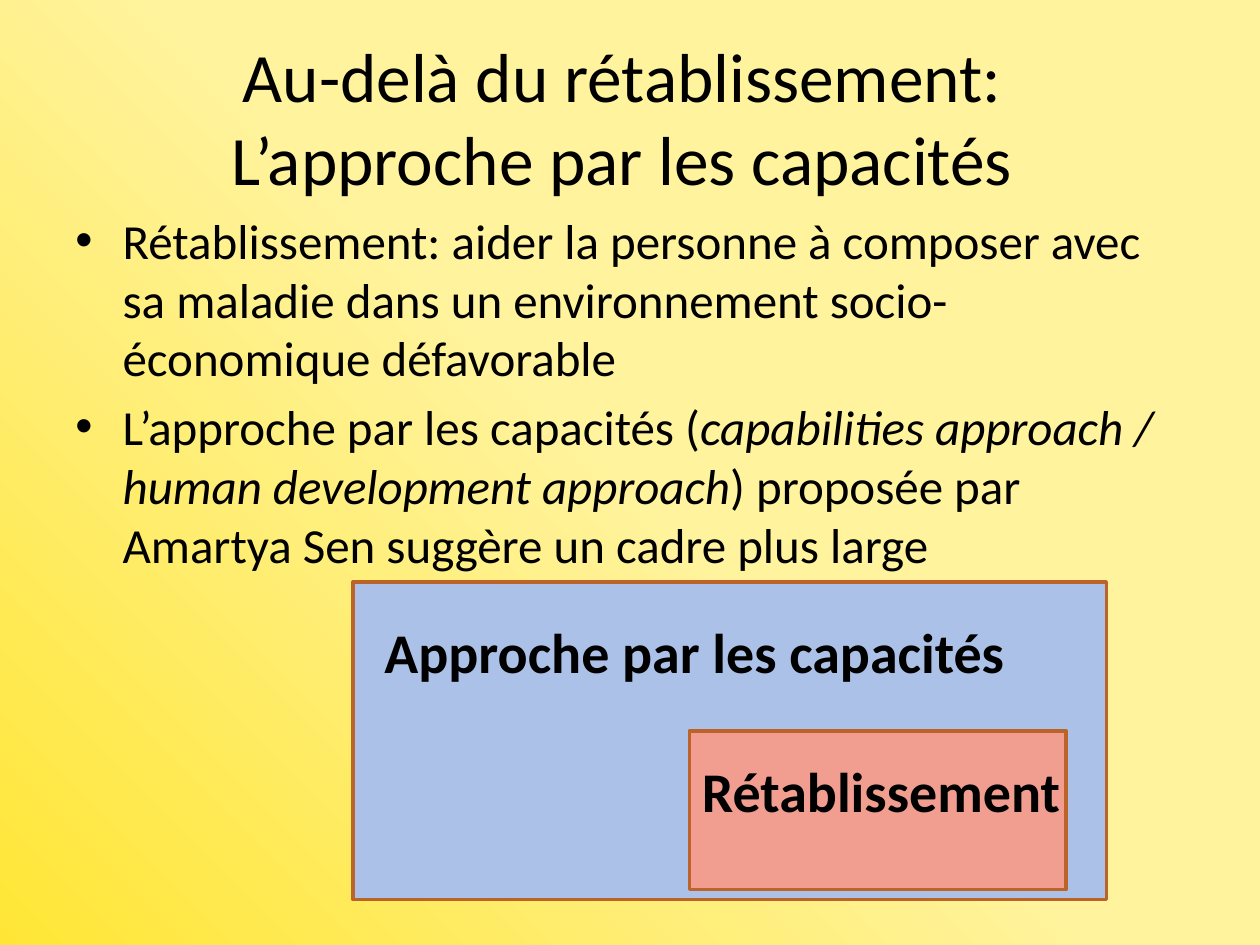
from copy import deepcopy

from pptx import Presentation
from pptx.dml.color import RGBColor
from pptx.enum import shapes, text
from pptx.oxml import parse_xml
from pptx.oxml.ns import nsdecls, qn
from pptx.util import Pt

YELLOW = RGBColor(0xFF, 0xE6, 0x36)
CREAM = RGBColor(0xFF, 0xF3, 0x9D)
BLUE = RGBColor(0xAC, 0xC1, 0xE8)
SALMON = RGBColor(0xF1, 0x9E, 0x91)
RUST = RGBColor(0xBC, 0x63, 0x29)
BLACK = RGBColor(0, 0, 0)

TITLE = "Au-delà du rétablissement: \vL’approche par les capacités "
# Each bullet is a list of (words, italic) runs.
BULLETS = [
    [("Rétablissement: aider la personne à composer avec sa maladie dans un "
      "environnement socio-économique défavorable", False)],
    [("L’approche par les capacités (", False),
     ("capabilities approach / human development approach", True),
     (") proposée par Amartya Sen suggère un cadre plus large", False)],
]


def format_font(font, size, **values):
    font.color.rgb = BLACK
    for name, value in {"name": "Calibri", "size": Pt(size), **values}.items():
        setattr(font, name, value)


def paint_background(slide):
    """Blend from yellow at bottom left to cream at the middle and beyond."""
    fill = slide.background.fill
    fill.gradient()
    fill.gradient_angle = 45
    start, middle = fill.gradient_stops
    start.color.rgb, start.position = YELLOW, 0
    middle.color.rgb, middle.position = CREAM, 0.5
    middle_stop = list(slide.element.iter(qn("a:gs")))[-1]
    end_stop = deepcopy(middle_stop)
    end_stop.set("pos", "100000")
    middle_stop.addnext(end_stop)


def place_title(slide, left, top, width, height):
    title = slide.shapes.title
    box = {"left": left, "top": top, "width": width, "height": height}
    for name, value in box.items():
        setattr(title, name, Pt(value))
    frame = title.text_frame
    frame.text = TITLE
    frame.auto_size = text.MSO_AUTO_SIZE.NONE
    frame.vertical_anchor = text.MSO_ANCHOR.MIDDLE
    paragraph = frame.paragraphs[0]
    paragraph.alignment = text.PP_ALIGN.CENTER
    for run in paragraph.runs:
        format_font(run.font, 39.6)


def add_text_frame(slide, left, top, width, height):
    box = slide.shapes.add_textbox(Pt(left), Pt(top), Pt(width), Pt(height))
    box.text_frame.word_wrap = True
    return box.text_frame


def add_bullets(slide, left, top, width, height):
    frame = add_text_frame(slide, left, top, width, height)
    for index, runs in enumerate(BULLETS):
        paragraph = frame.add_paragraph() if index else frame.paragraphs[0]
        paragraph.space_before = Pt(5.6)
        properties = paragraph._p.get_or_add_pPr()
        properties.set("marL", str(Pt(27)))
        properties.set("indent", str(-Pt(27)))
        for tag in (f'<a:buFont {nsdecls("a")} typeface="Arial"/>',
                    f'<a:buChar {nsdecls("a")} char="•"/>'):
            properties.append(parse_xml(tag))
        for words, italic in runs:
            run = paragraph.add_run()
            run.text = words
            format_font(run.font, 28, italic=italic)


def add_panel(slide, left, top, width, height, color):
    panel = slide.shapes.add_shape(
        shapes.MSO_SHAPE.RECTANGLE, Pt(left), Pt(top), Pt(width), Pt(height))
    panel.shadow.inherit = False
    panel.fill.solid()
    panel.fill.fore_color.rgb = color
    panel.line.color.rgb = RUST
    panel.line.width = Pt(2)


def add_label(slide, left, top, width, words):
    frame = add_text_frame(slide, left, top, width, 46)
    frame.auto_size = text.MSO_AUTO_SIZE.SHAPE_TO_FIT_TEXT
    run = frame.paragraphs[0].add_run()
    run.text = words
    format_font(run.font, 32, bold=True)


def add_nested_diagram(slide, left, top, width, height):
    """Show recovery as one part of the wider capabilities approach."""
    add_panel(slide, left, top, width, height, BLUE)
    add_label(slide, left + 11, top + 16.5, width - 11,
              "Approche par les capacités")
    inner_left, inner_top = left + 192.4, top + 85
    add_panel(slide, inner_left, inner_top, width / 2, height / 2, SALMON)
    add_label(slide, inner_left, inner_top + 11, width / 2 + 20,
              "Rétablissement")


def main():
    presentation = Presentation()
    presentation.slide_width, presentation.slide_height = Pt(720), Pt(540)
    slide = presentation.slides.add_slide(presentation.slide_layouts[5])
    paint_background(slide)
    place_title(slide, 36, 21.6, 648, 90)
    add_bullets(slide, 36, 116.6, 648, 366)
    add_nested_diagram(slide, 201.6, 332.6, 430.6, 181.4)
    presentation.save("out.pptx")


if __name__ == "__main__":
    main()
